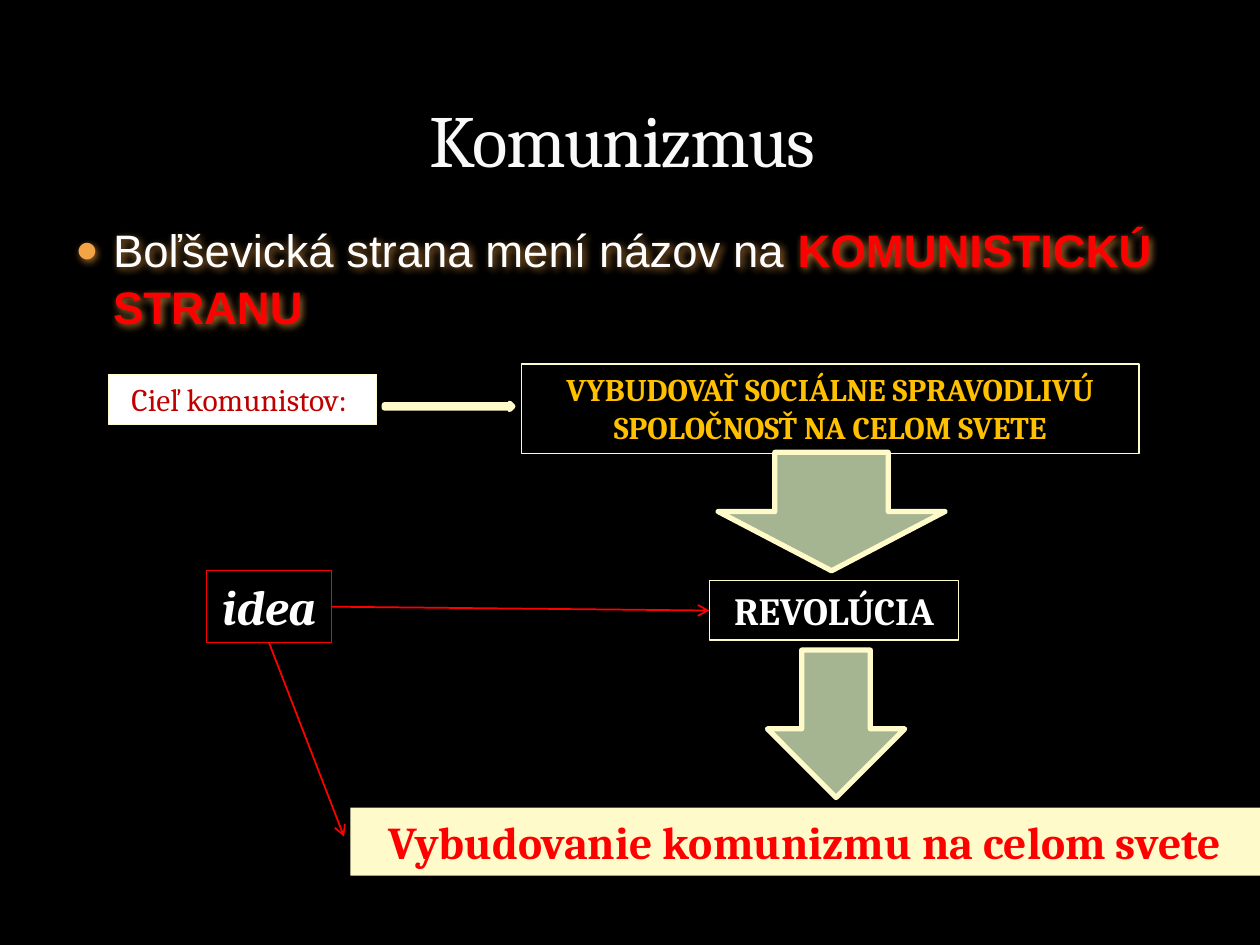
from lxml.etree import SubElement
from pptx import Presentation
from pptx.dml.color import RGBColor
from pptx.enum.shapes import MSO_CONNECTOR, MSO_SHAPE
from pptx.enum.text import MSO_ANCHOR, PP_ALIGN
from pptx.oxml import parse_xml
from pptx.oxml.ns import nsdecls, qn
from pptx.util import Inches, Pt

BLACK, WHITE, CREAM, SAGE = "000000", "FFFFFF", "FEFAC9", "A5B592"
RED, DARK_RED, GOLD, ORANGE = "FF0000", "C00000", "FFC000", "F3A447"


def rgb(value):
    return RGBColor.from_string(value)


class Board:
    """Holds the style and the slide; lengths are percentages of the slide's size."""

    serif, sans = "Cambria", "Arial"

    def __init__(self, deck):
        self.width, self.height = deck.slide_width, deck.slide_height
        self.slide = deck.slides.add_slide(deck.slide_layouts[5])
        backdrop = self.slide.background.fill
        backdrop.solid()
        backdrop.fore_color.rgb = rgb(BLACK)

    def across(self, share):
        return round(self.width * share / 100)

    def down(self, share):
        return round(self.height * share / 100)

    def place(self, left, top, width, height):
        return self.across(left), self.down(top), self.across(width), self.down(height)

    def add_words(self, paragraph, wording, size, colour, font=serif, bold=False, italic=False):
        run = paragraph.add_run()
        run.text = wording
        run.font.name, run.font.size = font, Pt(size)
        run.font.bold, run.font.italic = bold, italic
        run.font.color.rgb = rgb(colour)
        return run

    def title(self, area, wording):
        heading = self.slide.shapes.title
        heading.left, heading.top, heading.width, heading.height = self.place(*area)
        heading.text_frame.vertical_anchor = MSO_ANCHOR.BOTTOM
        paragraph = heading.text_frame.paragraphs[0]
        paragraph.alignment = PP_ALIGN.CENTER
        run = self.add_words(paragraph, wording, 42, "F9F9F9")
        run.font._element.set("spc", "-100")

    def bullet(self, area, runs):
        statement = self.slide.shapes.add_textbox(*self.place(*area))
        statement.text_frame.word_wrap = True
        paragraph = statement.text_frame.paragraphs[0]
        paragraph.line_spacing = 1.05
        properties = paragraph._p.get_or_add_pPr()
        properties.set("marL", str(Inches(0.3)))
        properties.set("indent", str(Inches(-0.3)))
        colour = SubElement(properties, qn("a:buClr"))
        SubElement(colour, qn("a:srgbClr"), val=ORANGE)
        SubElement(properties, qn("a:buSzPct"), val="85000")
        SubElement(properties, qn("a:buFont"), typeface=self.sans)
        SubElement(properties, qn("a:buChar"), char="●")
        for wording, tint, bold in runs:
            self.add_words(paragraph, wording, 26, tint, self.sans, bold)
        statement._element.spPr.append(parse_xml(
            f'<a:effectLst {nsdecls("a")}><a:outerShdw blurRad="50800" dist="25400" dir="2700000">'
            f'<a:srgbClr val="{ORANGE}"><a:alpha val="70000"/></a:srgbClr>'
            '</a:outerShdw></a:effectLst>'))

    def shape(self, kind, area, fill=None, line=None, weight=0.75):
        figure = self.slide.shapes.add_shape(kind, *self.place(*area))
        figure.shadow.inherit = False
        if fill:
            figure.fill.solid()
            figure.fill.fore_color.rgb = rgb(fill)
        else:
            figure.fill.background()
        if line:
            figure.line.color.rgb = rgb(line)
            figure.line.width = Pt(weight)
        else:
            figure.line.fill.background()
        return figure

    def box(self, area, lines, size, colour, fill=None, line=CREAM, bold=True, italic=False):
        panel = self.shape(MSO_SHAPE.RECTANGLE, area, fill, line)
        frame = panel.text_frame
        frame.word_wrap = False
        frame.vertical_anchor = MSO_ANCHOR.TOP
        for number, wording in enumerate(lines):
            paragraph = frame.add_paragraph() if number else frame.paragraphs[0]
            paragraph.alignment = PP_ALIGN.CENTER
            self.add_words(paragraph, wording, size, colour, bold=bold, italic=italic)
        return panel

    def block_arrow(self, kind, area, fill):
        self.shape(kind, area, fill, CREAM, 3)

    def link(self, source, site, end, target=None):
        arrow = self.slide.shapes.add_connector(
            MSO_CONNECTOR.STRAIGHT, 0, 0, self.across(end[0]), self.down(end[1]))
        arrow.begin_connect(source, site)
        if target:
            arrow.end_connect(target, 1)
        arrow.line.color.rgb = rgb(RED)
        arrow.line.width = Pt(1)
        SubElement(arrow.line._get_or_add_ln(), qn("a:tailEnd"), type="arrow")
        SubElement(arrow._element.spPr, qn("a:effectLst"))


def main():
    deck = Presentation()
    deck.slide_width, deck.slide_height = Inches(10), Inches(7.5)
    board = Board(deck)
    board.title((5, 2.27, 90, 17.73), "Komunizmus ")
    board.bullet((5, 22.5, 90, 66.67), [
        ("Boľševická strana mení názov na ", WHITE, False),
        ("KOMUNISTICKÚ STRANU", RED, True)])

    board.box((8.6, 39.6, 21.3, 5.33), ["Cieľ komunistov: "], 18, DARK_RED, WHITE, bold=False)
    board.block_arrow(MSO_SHAPE.RIGHT_ARROW, (30.5, 42.67, 10.2, 0.67), CREAM)
    board.box((41.4, 38.53, 49, 9.47),
              ["VYBUDOVAŤ SOCIÁLNE SPRAVODLIVÚ", "SPOLOČNOSŤ NA CELOM SVETE"], 18, GOLD)
    board.block_arrow(MSO_SHAPE.DOWN_ARROW, (57, 47.87, 18, 12.53), SAGE)
    revolution = board.box((56.3, 61.47, 19.8, 6.27), ["REVOLÚCIA"], 22, WHITE)
    board.block_arrow(MSO_SHAPE.DOWN_ARROW, (60.9, 68.8, 10.9, 15.6), SAGE)
    board.box((27.8, 85.47, 72.2, 7.2), ["Vybudovanie komunizmu na celom svete"],
              26, RED, CREAM, line=None)
    idea = board.box((16.4, 60.4, 9.9, 7.6), ["idea"], 28, WHITE, line=RED, italic=True)
    board.link(idea, 3, (56.3, 64.53), revolution)
    board.link(idea, 2, (27.3, 88.53))
    deck.save("out.pptx")


if __name__ == "__main__":
    main()
